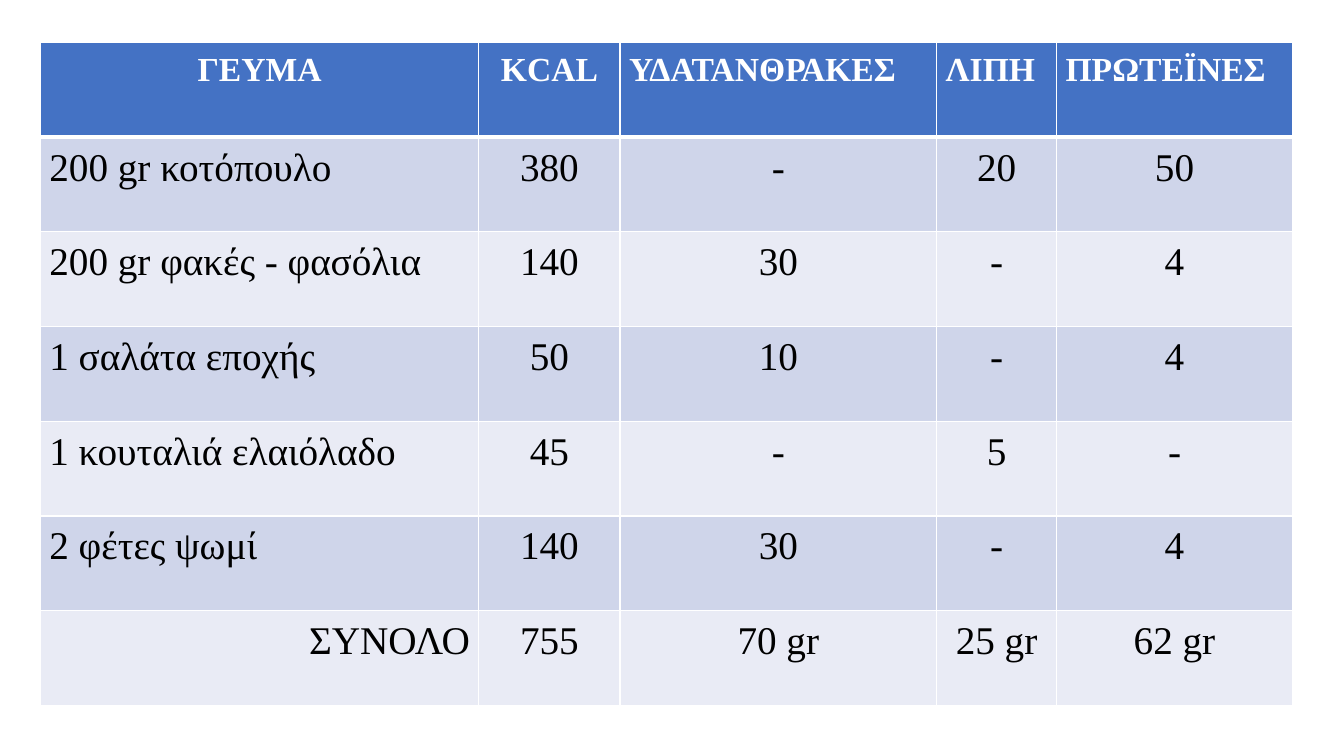
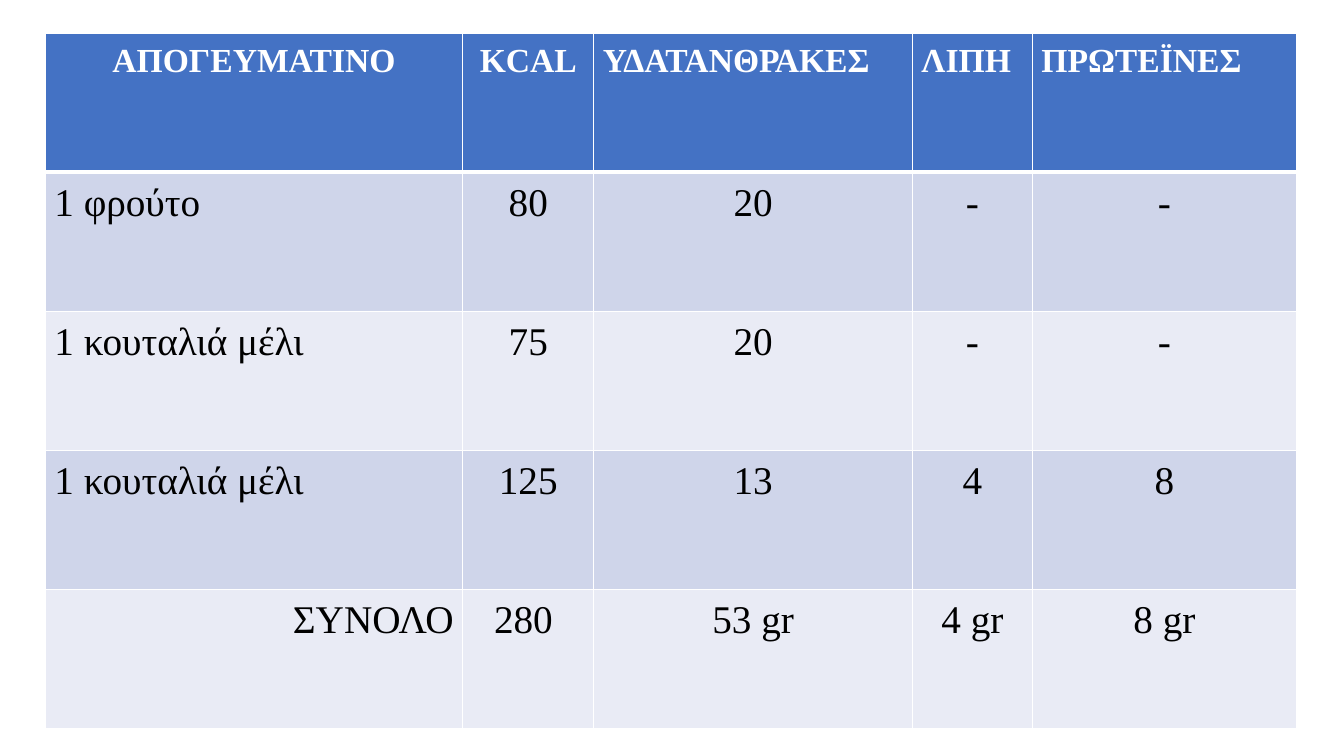
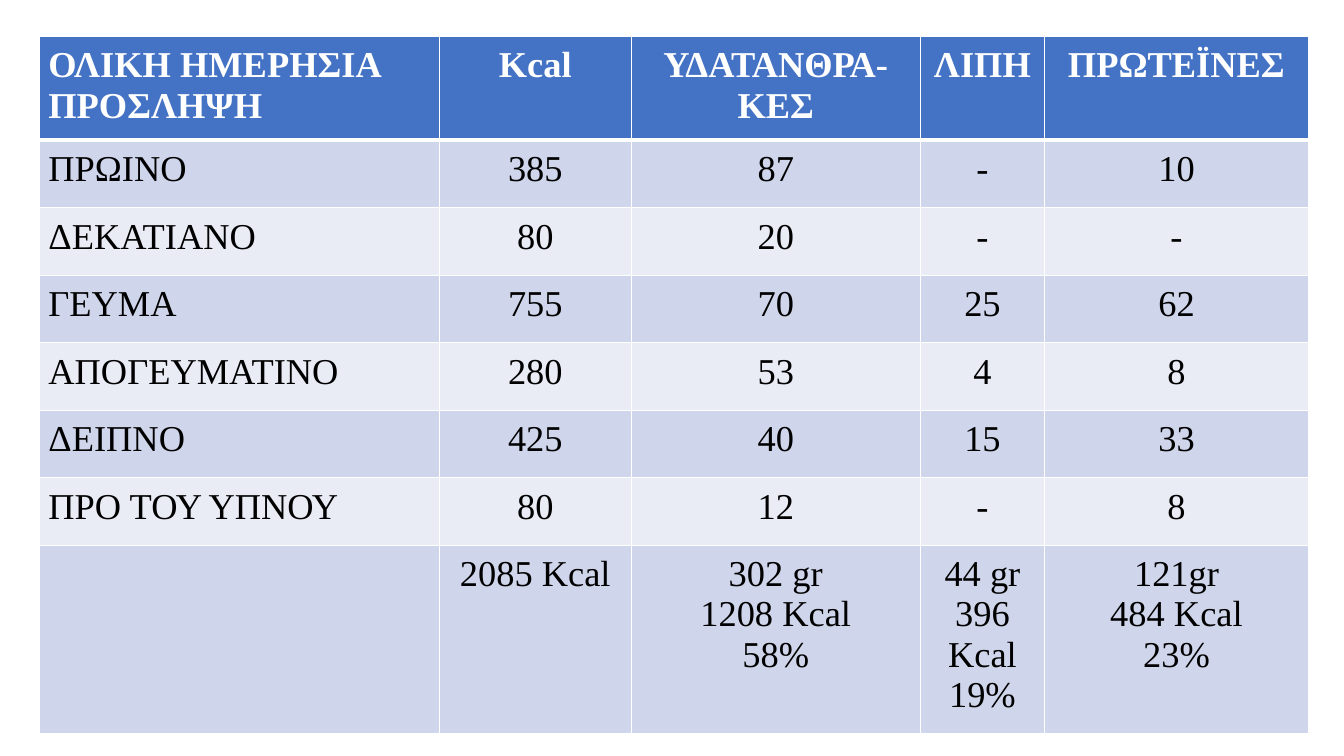
from dataclasses import dataclass

from lxml.etree import SubElement
from pptx import Presentation
from pptx.dml.color import RGBColor
from pptx.enum.text import PP_ALIGN as Align
from pptx.oxml.ns import qn
from pptx.util import Inches, Pt


@dataclass(frozen=True)
class Theme:
    font: str = "Times New Roman"
    header_fill: str = "4472C4"
    band_fills: tuple[str, str] = ("CFD5EA", "E9EBF5")
    header_text: str = "FFFFFF"
    body_text: str = "000000"
    border: str = "FFFFFF"
    border_width: float = 1
    header_rule_width: float = 3
    cell_margin: float = 0.09


@dataclass(frozen=True)
class NutritionTable:
    left: float
    top: float
    column_widths: tuple[float, ...]
    row_heights: tuple[float, ...]
    header_size: int
    body_size: int
    header_alignments: tuple[Align, ...]
    rows: tuple[tuple[str, ...], ...]


THEME = Theme()
MEAL_HEADER_ALIGNMENTS = (Align.CENTER,) * 2 + (Align.LEFT,) * 3
DAY_HEADER_ALIGNMENTS = (Align.LEFT,) + (Align.CENTER,) * 4
NUTRIENTS = ("KCAL", "ΥΔΑΤΑΝΘΡΑΚΕΣ", "ΛΙΠΗ", "ΠΡΩΤΕΪΝΕΣ")
TOTAL_LABEL = "ΣΥΝΟΛΟ"

LUNCH = NutritionTable(
    left=0.4,
    top=0.42,
    column_widths=(4.35, 1.4, 3.14, 1.19, 2.34),
    row_heights=(0.94,) * 7,
    header_size=24,
    body_size=28,
    header_alignments=MEAL_HEADER_ALIGNMENTS,
    rows=(
        ("ΓΕΥΜΑ", *NUTRIENTS),
        ("200 gr κοτόπουλο", "380", "-", "20", "50"),
        ("200 gr φακές - φασόλια", "140", "30", "-", "4"),
        ("1 σαλάτα εποχής", "50", "10", "-", "4"),
        ("1 κουταλιά ελαιόλαδο", "45", "-", "5", "-"),
        ("2 φέτες ψωμί", "140", "30", "-", "4"),
        (TOTAL_LABEL, "755", "70 gr", "25 gr", "62 gr"),
    ),
)
AFTERNOON_SNACK = NutritionTable(
    left=0.45,
    top=0.33,
    column_widths=(4.14, 1.3, 3.16, 1.19, 2.62),
    row_heights=(1.38,) * 5,
    header_size=24,
    body_size=28,
    header_alignments=MEAL_HEADER_ALIGNMENTS,
    rows=(
        ("ΑΠΟΓΕΥΜΑΤΙΝΟ", *NUTRIENTS),
        ("1 φρούτο", "80", "20", "-", "-"),
        ("1 κουταλιά μέλι", "75", "20", "-", "-"),
        ("1 κουταλιά μέλι", "125", "13", "4", "8"),
        (TOTAL_LABEL, "280 ", "53 gr", "4 gr", "8 gr"),
    ),
)
DAILY_INTAKE = NutritionTable(
    left=0.39,
    top=0.36,
    column_widths=(3.97, 1.9, 2.87, 1.23, 2.62),
    row_heights=(1.03,) + (0.67,) * 6 + (1.87,),
    header_size=26,
    body_size=26,
    header_alignments=DAY_HEADER_ALIGNMENTS,
    rows=(
        ("ΟΛΙΚΗ ΗΜΕΡΗΣΙΑ ΠΡΟΣΛΗΨΗ", "Kcal", "ΥΔΑΤΑΝΘΡΑ-ΚΕΣ", "ΛΙΠΗ", "ΠΡΩΤΕΪΝΕΣ"),
        ("ΠΡΩΙΝΟ", "385", "87", "-", "10"),
        ("ΔΕΚΑΤΙΑΝΟ", "80", "20", "-", "-"),
        ("ΓΕΥΜΑ", "755", "70", "25", "62"),
        ("ΑΠΟΓΕΥΜΑΤΙΝΟ", "280", "53", "4", "8"),
        ("ΔΕΙΠΝΟ", "425", "40", "15", "33"),
        ("ΠΡΟ ΤΟΥ ΥΠΝΟΥ", "80", "12", "-", "8"),
        (
            "",
            "2085 Kcal",
            "302 gr\n1208 Kcal\n58%",
            "44 gr\n396 Kcal\n19%",
            "121gr\n484 Kcal\n23%",
        ),
    ),
)


def set_borders(cell, row_index: int) -> None:
    """Draw all four borders, with the thicker rule below the header row."""
    thin, thick = THEME.border_width, THEME.header_rule_width
    widths = {
        "a:lnL": thin,
        "a:lnR": thin,
        "a:lnT": thick if row_index == 1 else thin,
        "a:lnB": thick if row_index == 0 else thin,
    }
    properties = cell._tc.get_or_add_tcPr()
    for position, (tag, width) in enumerate(widths.items()):
        line = SubElement(properties, qn(tag), w=str(Pt(width)))
        fill = SubElement(line, qn("a:solidFill"))
        SubElement(fill, qn("a:srgbClr"), val=THEME.border)
        properties.insert(position, line)


def body_alignment(text: str, column_index: int) -> Align:
    if text == TOTAL_LABEL:
        return Align.RIGHT
    return Align.CENTER if column_index else Align.LEFT


def format_cell(cell, row_index: int, column_index: int, content: NutritionTable) -> None:
    is_header = row_index == 0
    text = content.rows[row_index][column_index]
    cell.text = text
    margin = Inches(THEME.cell_margin)
    cell.margin_left = cell.margin_right = margin
    cell.margin_top = cell.margin_bottom = margin
    cell.fill.solid()
    fill = THEME.header_fill if is_header else THEME.band_fills[(row_index - 1) % 2]
    cell.fill.fore_color.rgb = RGBColor.from_string(fill)
    set_borders(cell, row_index)

    color = THEME.header_text if is_header else THEME.body_text
    for paragraph in cell.text_frame.paragraphs:
        paragraph.alignment = (
            content.header_alignments[column_index]
            if is_header
            else body_alignment(text, column_index)
        )
        font = paragraph.font
        font.name = THEME.font
        font.size = Pt(content.header_size if is_header else content.body_size)
        font.bold = is_header
        font.color.rgb = RGBColor.from_string(color)


def add_nutrition_slide(presentation, content: NutritionTable) -> None:
    slide = presentation.slides.add_slide(presentation.slide_layouts[6])
    table = slide.shapes.add_table(
        len(content.row_heights),
        len(content.column_widths),
        Inches(content.left),
        Inches(content.top),
        Inches(sum(content.column_widths)),
        Inches(sum(content.row_heights)),
    ).table
    for column, width in zip(table.columns, content.column_widths):
        column.width = Inches(width)
    for row_index, height in enumerate(content.row_heights):
        row = table.rows[row_index]
        row.height = Inches(height)
        for column_index, cell in enumerate(row.cells):
            format_cell(cell, row_index, column_index, content)


def main() -> None:
    presentation = Presentation()
    presentation.slide_width = Inches(13.33)
    presentation.slide_height = Inches(7.5)
    for content in (LUNCH, AFTERNOON_SNACK, DAILY_INTAKE):
        add_nutrition_slide(presentation, content)
    presentation.save("out.pptx")


if __name__ == "__main__":
    main()
